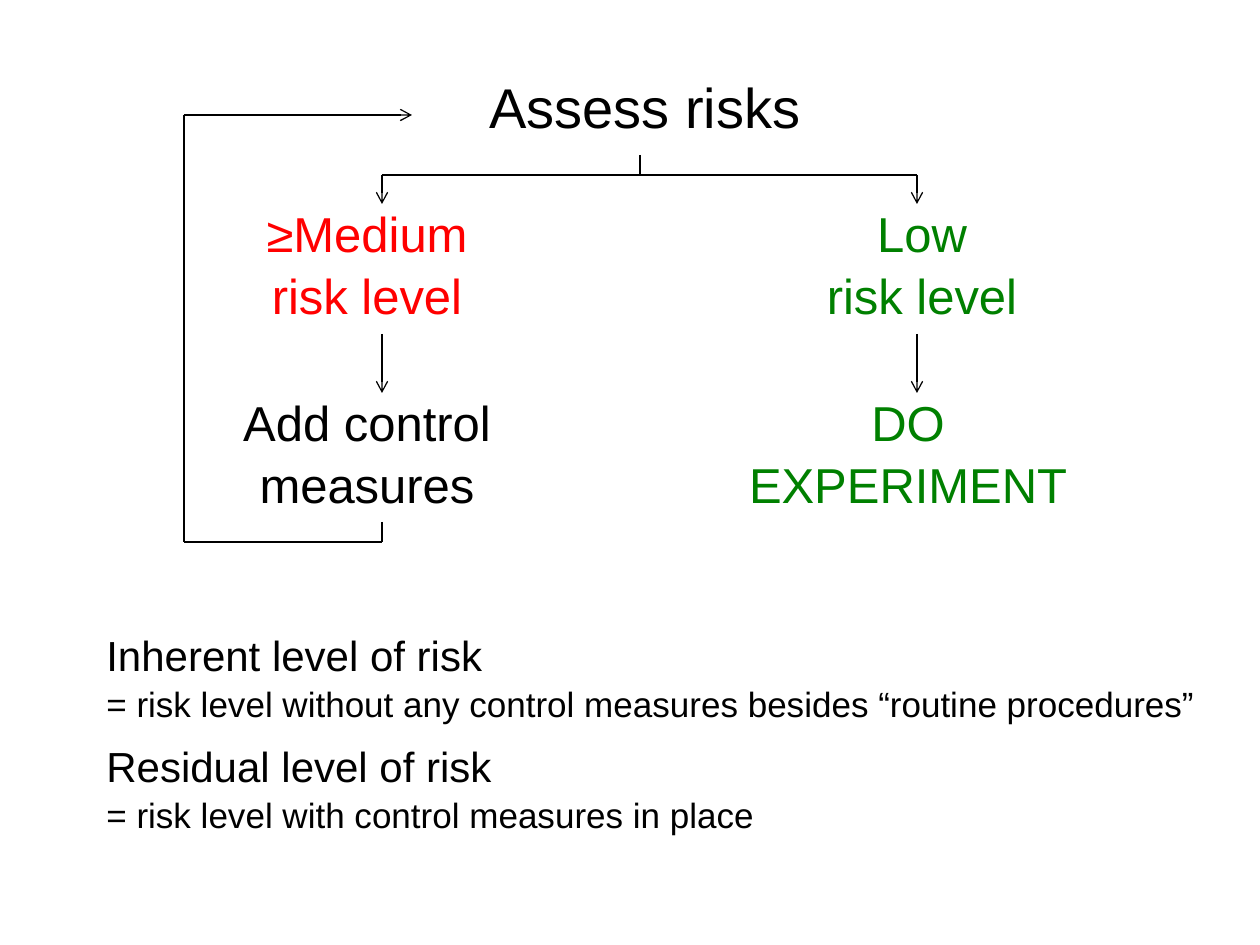
from typing import NamedTuple

from lxml.etree import SubElement
from pptx import Presentation
from pptx.dml.color import RGBColor
from pptx.enum.shapes import MSO_CONNECTOR as Connector
from pptx.enum.text import MSO_ANCHOR as Anchor, MSO_AUTO_SIZE as AutoSize, PP_ALIGN as Align
from pptx.oxml.ns import qn
from pptx.util import Emu, Pt

EMU_PER_PX = 914400 / 126
FONT = "Arial"
BLACK, RED, GREEN = "000000", "FF0000", "008000"
LINE_SPACING = 1.05

# Axes shared by the flowchart lines
LOOP_X, MEDIUM_X, TRUNK_X, LOW_X = 184, 382, 640, 917
TITLE_LEFT, LOOP_TOP, SPLIT_Y, LOOP_BOTTOM = 412, 115, 175, 542


class Box(NamedTuple):
    left: int
    top: int
    width: int
    height: int


class Step(NamedTuple):
    box: Box
    lines: list[str]
    color: str


class Line(NamedTuple):
    start: tuple[int, int]
    end: tuple[int, int]
    arrow: bool = False


class Definition(NamedTuple):
    term: str
    meaning: str


STEPS = [
    Step(Box(134, 224, 466, 77), ["≥Medium", "risk level"], RED),
    Step(Box(689, 224, 466, 77), ["Low", "risk level"], GREEN),
    Step(Box(134, 413, 466, 77), ["Add control measures"], BLACK),
    Step(Box(729, 413, 358, 77), ["DO", "EXPERIMENT"], GREEN),
]

LINES = [
    # Split below the title
    Line((TRUNK_X, 155), (TRUNK_X, SPLIT_Y)),
    Line((MEDIUM_X, SPLIT_Y), (LOW_X, SPLIT_Y)),
    # Arrows down each branch
    *[Line((x, top), (x, bottom), True)
      for x in (MEDIUM_X, LOW_X)
      for top, bottom in ((SPLIT_Y, 204), (334, 393))],
    # Loop back to the title
    Line((MEDIUM_X, 522), (MEDIUM_X, LOOP_BOTTOM)),
    Line((LOOP_X, LOOP_BOTTOM), (MEDIUM_X, LOOP_BOTTOM)),
    Line((LOOP_X, LOOP_TOP), (LOOP_X, LOOP_BOTTOM)),
    Line((LOOP_X, LOOP_TOP), (TITLE_LEFT, LOOP_TOP), True),
]

DEFINITIONS = [
    Definition("Inherent level of risk",
               "= risk level without any control measures besides “routine procedures”"),
    Definition("Residual level of risk", "= risk level with control measures in place"),
]


def px(length: int) -> Emu:
    return Emu(round(length * EMU_PER_PX))


def rgb(color: str) -> RGBColor:
    return RGBColor.from_string(color)


def format_paragraph(paragraph, size: int, color: str, align) -> None:
    paragraph.alignment = align
    paragraph.line_spacing = LINE_SPACING
    paragraph.font.name = FONT
    paragraph.font.size = Pt(size)
    paragraph.font.color.rgb = rgb(color)


def set_frame(frame, anchor) -> None:
    frame.word_wrap = True
    frame.auto_size = AutoSize.NONE
    frame.vertical_anchor = anchor


def add_title(slide, box: Box, text: str) -> None:
    title = slide.shapes.title
    title.left, title.top, title.width, title.height = map(px, box)
    title.text = text
    set_frame(title.text_frame, Anchor.MIDDLE)
    format_paragraph(title.text_frame.paragraphs[0], 32, BLACK, Align.CENTER)


def add_text_box(slide, box: Box, lines: list[str], anchor):
    frame = slide.shapes.add_textbox(*map(px, box)).text_frame
    frame.text = "\n".join(lines)
    set_frame(frame, anchor)
    return frame.paragraphs


def add_step(slide, step: Step) -> None:
    for paragraph in add_text_box(slide, step.box, step.lines, Anchor.MIDDLE):
        format_paragraph(paragraph, 28, step.color, Align.CENTER)


def add_line(slide, line: Line) -> None:
    connector = slide.shapes.add_connector(
        Connector.STRAIGHT, *map(px, line.start + line.end))
    connector.line.color.rgb = rgb(BLACK)
    connector.line.width = Pt(0.75)
    if line.arrow:
        SubElement(connector.line._get_or_add_ln(), qn("a:tailEnd"), type="arrow")
    SubElement(connector._element.spPr, qn("a:effectLst"))


def add_definitions(slide, box: Box, definitions: list[Definition]) -> None:
    lines = [text for definition in definitions for text in definition]
    for index, paragraph in enumerate(add_text_box(slide, box, lines, Anchor.TOP)):
        is_term = index % 2 == 0
        format_paragraph(paragraph, 24 if is_term else 20, BLACK, Align.LEFT)
        if is_term and index:
            paragraph.space_before = Pt(8)


def main() -> None:
    presentation = Presentation()
    presentation.slide_width, presentation.slide_height = px(1260), px(945)
    slide = presentation.slides.add_slide(presentation.slide_layouts[5])

    # Flowchart
    add_title(slide, Box(TITLE_LEFT, 66, 466, 77), "Assess risks")
    for step in STEPS:
        add_step(slide, step)
    for line in LINES:
        add_line(slide, line)

    # Definitions below the flowchart
    add_definitions(slide, Box(94, 621, 1122, 238), DEFINITIONS)

    presentation.save("out.pptx")


if __name__ == "__main__":
    main()
